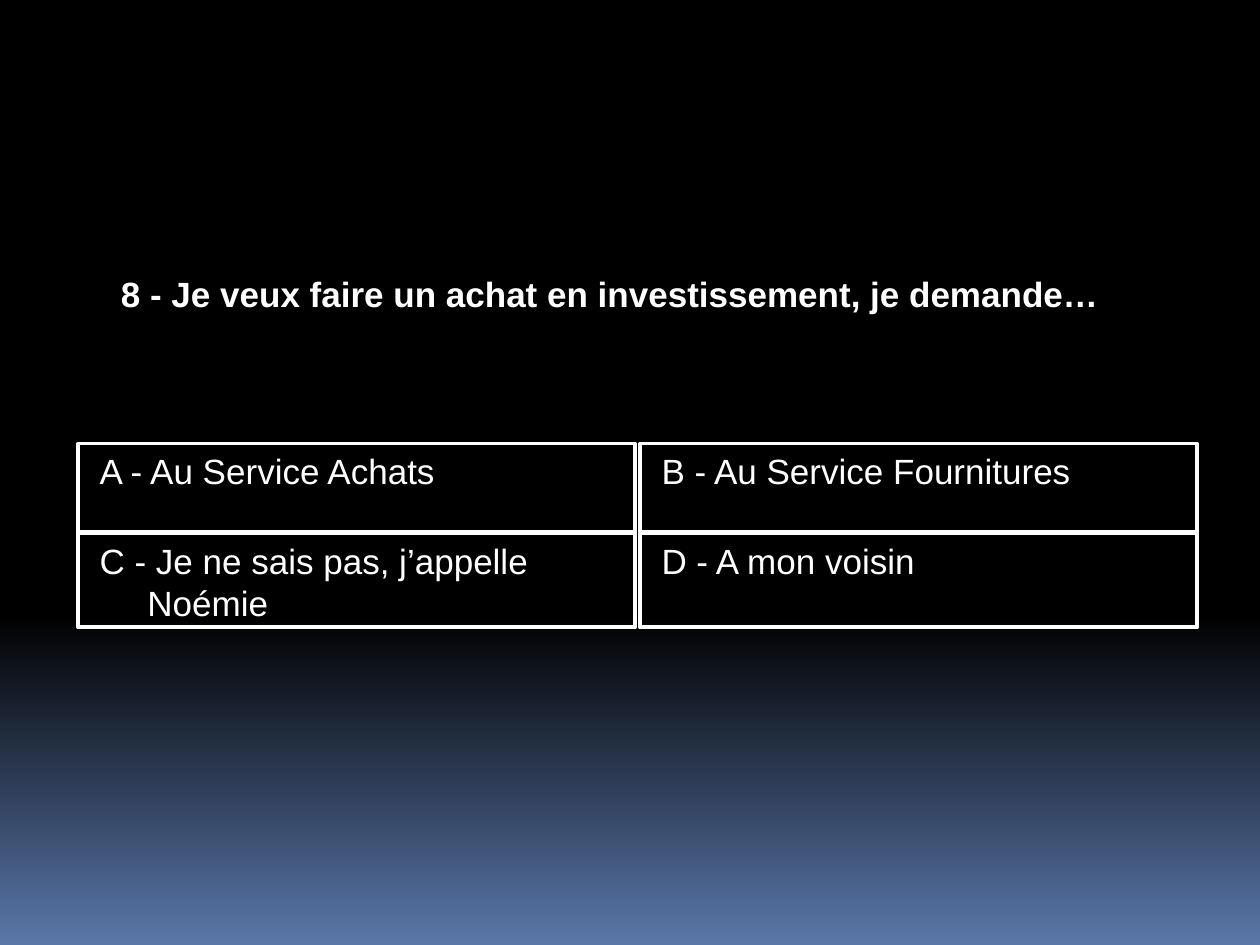
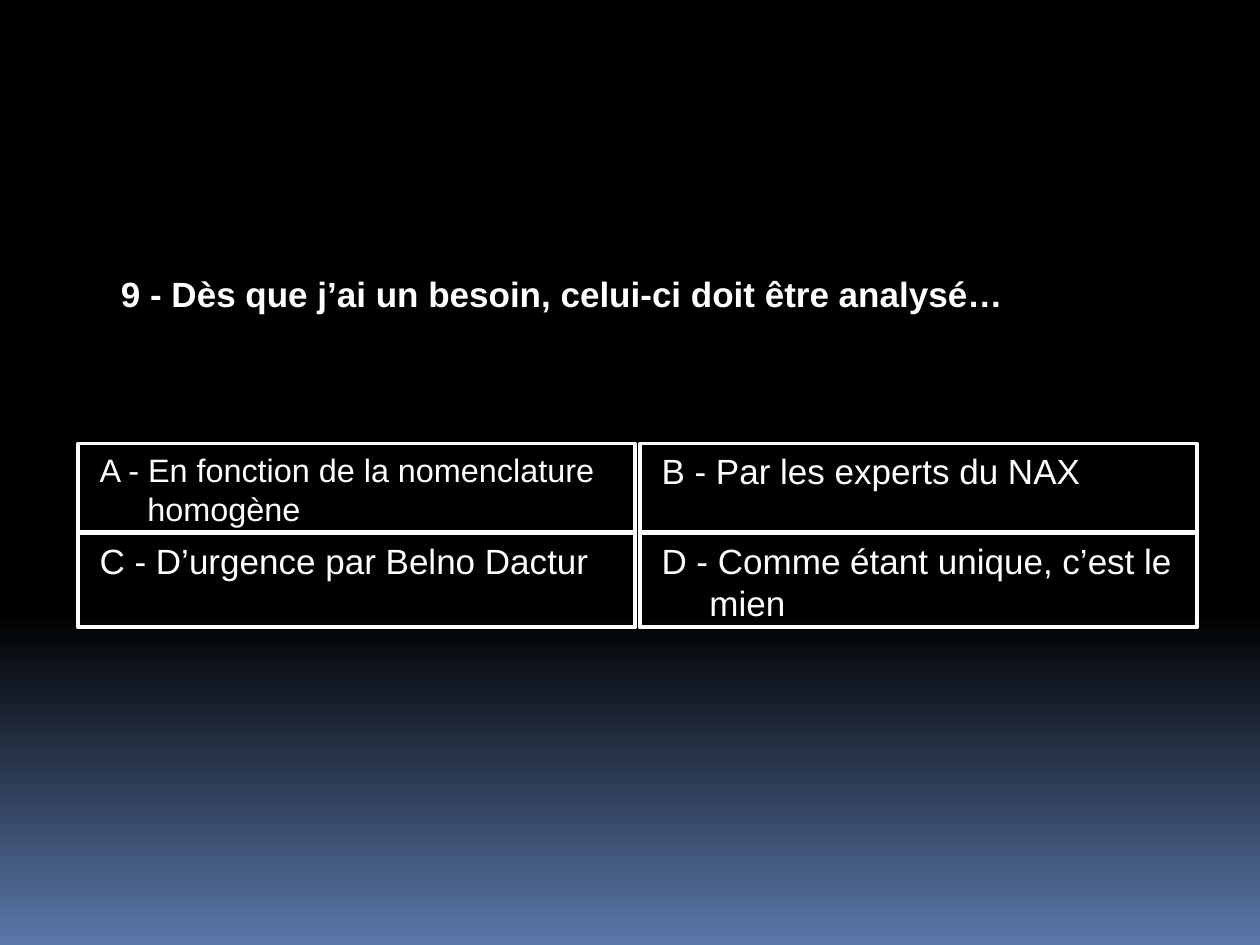
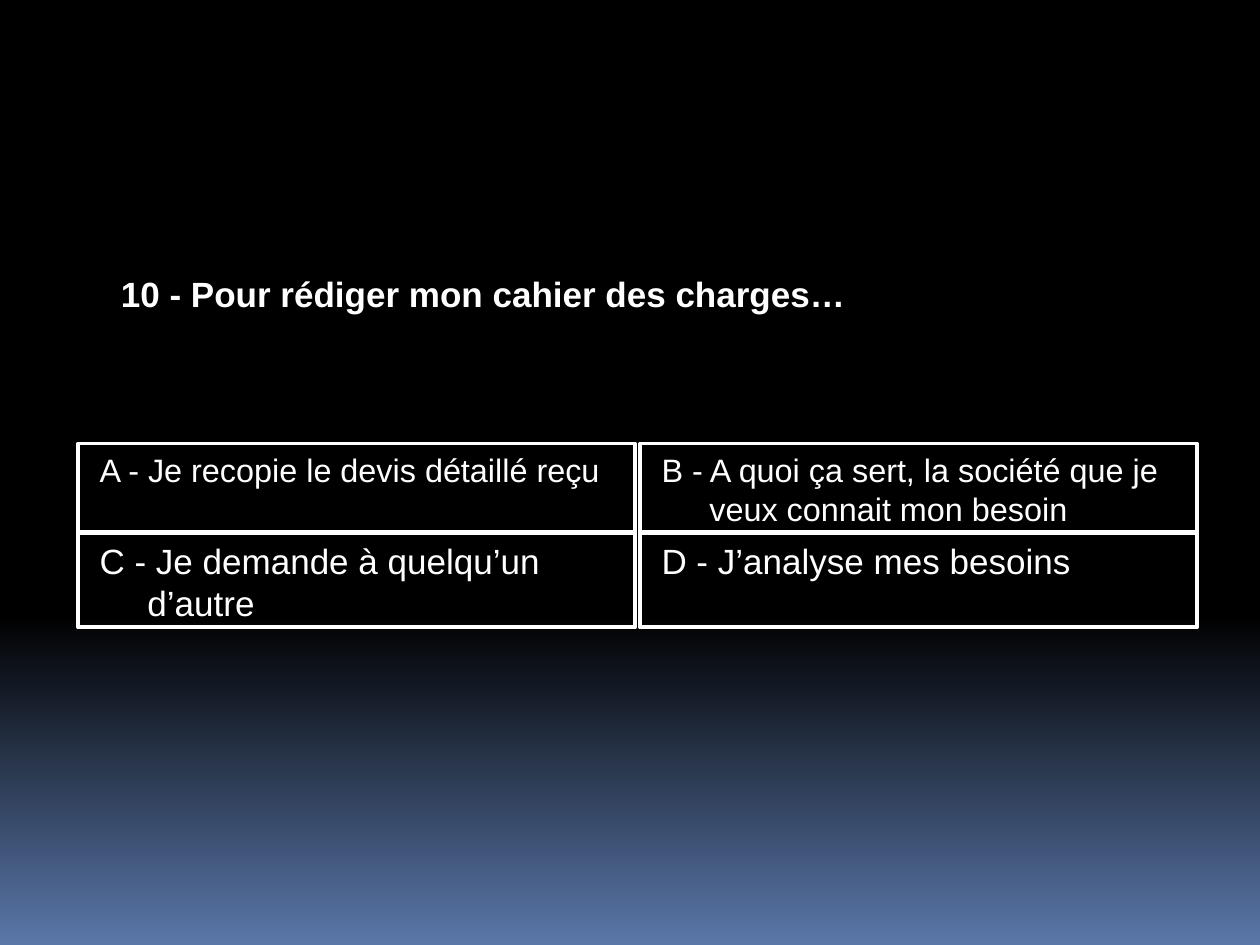
from lxml.etree import SubElement
from pptx import Presentation
from pptx.dml.color import RGBColor
from pptx.enum.text import MSO_ANCHOR, MSO_AUTO_SIZE, PP_ALIGN
from pptx.oxml.ns import qn
from pptx.util import Emu, Pt

EMU_PER_PX = 9144
WHITE, BLACK, BLUE = "FFFFFF", "000000", "5A77A9"
COMPARISON_LAYOUT = 4

QUESTION_BOX = (86, 211, 850, 85)
ANSWERS_BOX = (62, 352, 888, 146)
COLUMN_GAP, ROW_GAP = 4, 1
TOP_ROW_HEIGHT = 70
HANGING, FIRST_LINE = 45, -38

FRAME_FORMAT = {
    "word_wrap": True,
    "auto_size": MSO_AUTO_SIZE.NONE,
    "vertical_anchor": MSO_ANCHOR.TOP,
}
PARAGRAPH_FORMAT = {"alignment": PP_ALIGN.LEFT, "line_spacing": 1.0}

QUIZ = [
    ("8 - Je veux faire un achat en investissement, je demande…", [
        ("A - Au Service Achats", 20),
        ("B - Au Service Fournitures", 20),
        ("C - Je ne sais pas, j’appelle Noémie", 20),
        ("D - A mon voisin", 20),
    ]),
    ("9 - Dès que j’ai un besoin, celui-ci doit être analysé…", [
        ("A - En fonction de la nomenclature homogène", 18.5),
        ("B - Par les experts du NAX", 20),
        ("C - D’urgence par Belno Dactur", 20),
        ("D - Comme étant unique, c’est le mien", 20),
    ]),
    ("10 - Pour rédiger mon cahier des charges…", [
        ("A - Je recopie le devis détaillé reçu", 18.5),
        ("B - A quoi ça sert, la société que je veux connait mon besoin", 18.5),
        ("C - Je demande à quelqu’un d’autre", 20),
        ("D - J’analyse mes besoins", 20),
    ]),
]


def px(length):
    return Emu(length * EMU_PER_PX)


def color(value):
    return RGBColor.from_string(value)


def apply(target, values):
    for name, value in values.items():
        setattr(target, name, value)


def place(shape, box):
    apply(shape, dict(zip(("left", "top", "width", "height"), map(px, box))))


def write(shape, text, size, bold):
    frame = shape.text_frame
    frame.text = text
    apply(frame, FRAME_FORMAT)
    paragraph = frame.paragraphs[0]
    apply(paragraph, PARAGRAPH_FORMAT)
    font = paragraph.runs[0].font
    apply(font, {"name": "Arial", "size": Pt(size), "bold": bold})
    font.color.rgb = color(WHITE)
    return paragraph


def paint_background(master):
    fill = master.background.fill
    fill.gradient()
    fill.gradient_angle = 270
    for stop, (position, value) in zip(fill.gradient_stops, [(0.65, BLACK), (1, BLUE)]):
        stop.position = position
        stop.color.rgb = color(value)


def add_answer(shape, box, text, size):
    place(shape, box)
    shape.line.color.rgb = color(WHITE)
    shape.line.width = Pt(2.25)
    paragraph = write(shape, text, size, False)
    paragraph.space_before = Pt(7)
    properties = paragraph._p.get_or_add_pPr()
    properties.set("marL", str(px(HANGING)))
    properties.set("indent", str(px(FIRST_LINE)))
    SubElement(properties, qn("a:buNone"))


def add_answers(shapes, box, answers):
    left, top, width, height = box
    column_width = (width - COLUMN_GAP) // 2
    bottom_offset = TOP_ROW_HEIGHT + ROW_GAP
    rows = [(top, TOP_ROW_HEIGHT), (top + bottom_offset, height - bottom_offset)]
    for index, (shape, (text, size)) in enumerate(zip(shapes, answers)):
        row, column = divmod(index, 2)
        row_top, row_height = rows[row]
        answer_left = left + column * (column_width + COLUMN_GAP)
        add_answer(shape, (answer_left, row_top, column_width, row_height), text, size)


def add_question_slide(presentation, question, answers):
    slide = presentation.slides.add_slide(presentation.slide_layouts[COMPARISON_LAYOUT])
    title = slide.shapes.title
    place(title, QUESTION_BOX)
    write(title, question, 20, True)
    add_answers(list(slide.placeholders)[1:], ANSWERS_BOX, answers)


def main():
    presentation = Presentation()
    apply(presentation, {"slide_width": px(1000), "slide_height": px(750)})
    paint_background(presentation.slide_master)
    for question, answers in QUIZ:
        add_question_slide(presentation, question, answers)
    presentation.save("out.pptx")


if __name__ == "__main__":
    main()
